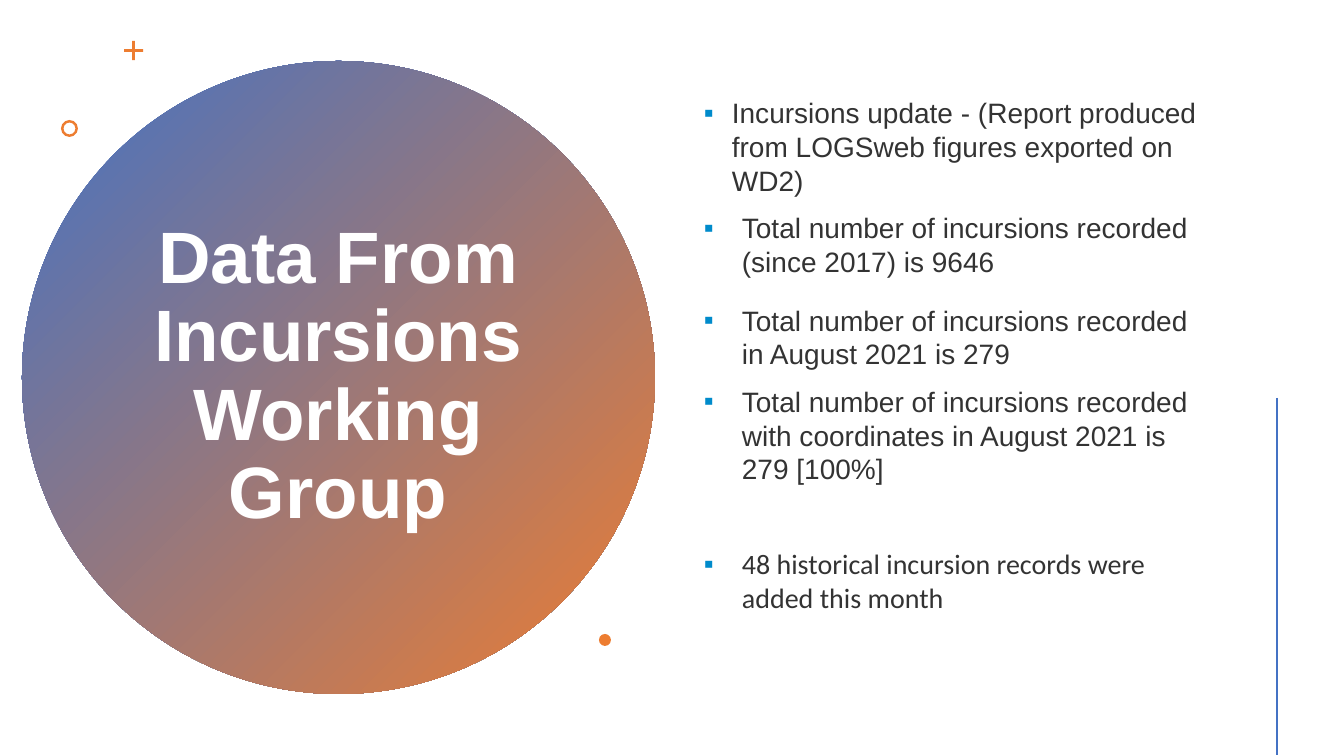
from lxml import etree
from pptx import Presentation
from pptx.dml.color import RGBColor
from pptx.enum.shapes import MSO_CONNECTOR, MSO_SHAPE
from pptx.enum.text import MSO_ANCHOR, PP_ALIGN
from pptx.oxml.ns import qn
from pptx.util import Pt

PX = 914400 / 100.8
BLUE = RGBColor(0x44, 0x72, 0xC4)
ORANGE = RGBColor(0xED, 0x7D, 0x31)
WHITE = RGBColor(0xFF, 0xFF, 0xFF)
DARK = RGBColor(0x33, 0x33, 0x33)
BULLET = RGBColor(0x00, 0x8B, 0xCB)

OVAL, DONUT, CROSS = MSO_SHAPE.OVAL, MSO_SHAPE.DONUT, MSO_SHAPE.CROSS
STRAIGHT = MSO_CONNECTOR.STRAIGHT
MIDDLE = MSO_ANCHOR.MIDDLE
CENTER = PP_ALIGN.CENTER

TITLE = "Data From Incursions Working Group"
TITLE_FONT = {"name": "Arial", "size": Pt(52), "bold": True}
BODY_FONT = {"name": "Arial", "size": Pt(20)}
# text, hanging indent in px, space before and after in points, font name
ITEMS = [
    ("Incursions update - (Report produced from LOGSweb figures exported on WD2)", 28, 0, 0, "Arial"),
    ("Total number of incursions recorded (since 2017) is 9646", 38, 10, 8, "Arial"),
    ("Total number of incursions recorded in August 2021 is 279", 38, 10, 0, "Arial"),
    ("Total number of incursions recorded with coordinates in August 2021 is 279 [100%]", 38, 10, 0, "Arial"),
    ("48 historical incursion records were added this month", 38, 44, 0, "Calibri"),
]


def px(*lengths):
    return [round(length * PX) for length in lengths]


def add_shape(slide, kind, box, color=ORANGE, adjustment=None):
    shape = slide.shapes.add_shape(kind, *px(*box))
    shape.shadow.inherit = False
    shape.line.fill.background()
    shape.fill.solid()
    shape.fill.fore_color.rgb = color
    if adjustment is not None:
        shape.adjustments[0] = adjustment
    return shape


def add_gradient_circle(slide, box):
    fill = add_shape(slide, OVAL, box).fill
    fill.gradient()
    fill.gradient_angle = 315
    for stop, position, color in zip(fill.gradient_stops, (0, 1), (BLUE, ORANGE)):
        stop.position = position
        stop.color.rgb = color


def add_text_frame(slide, box):
    frame = slide.shapes.add_textbox(*px(*box)).text_frame
    frame.word_wrap = True
    frame.vertical_anchor = MIDDLE
    return frame


def write_text(paragraph, text, font_values, color):
    run = paragraph.add_run()
    run.text = text
    for name, value in font_values.items():
        setattr(run.font, name, value)
    run.font.color.rgb = color


def add_bullet(paragraph, indent):
    """Give the paragraph a square bullet with a hanging indent."""
    properties = paragraph._p.get_or_add_pPr()
    (offset,) = px(indent)
    properties.set("marL", str(offset))
    properties.set("indent", str(-offset))
    color = etree.SubElement(properties, qn("a:buClr"))
    etree.SubElement(color, qn("a:srgbClr"), val=str(BULLET))
    etree.SubElement(properties, qn("a:buFont"), typeface="Arial")
    etree.SubElement(properties, qn("a:buChar"), char="▪")


def add_title(slide, box):
    paragraph = add_text_frame(slide, box).paragraphs[0]
    paragraph.alignment = CENTER
    paragraph.line_spacing = 0.9
    write_text(paragraph, TITLE, TITLE_FONT, WHITE)


def add_bullet_list(slide, box):
    frame = add_text_frame(slide, box)
    for index, (text, indent, before, after, font_name) in enumerate(ITEMS):
        paragraph = frame.add_paragraph() if index else frame.paragraphs[0]
        add_bullet(paragraph, indent)
        paragraph.space_before = Pt(before)
        paragraph.space_after = Pt(after)
        write_text(paragraph, text, BODY_FONT | {"name": font_name}, DARK)


def add_line(slide, ends):
    connector = slide.shapes.add_connector(STRAIGHT, *px(*ends))
    connector.line.color.rgb = BLUE
    connector.line.width = Pt(2)
    etree.SubElement(connector._element.spPr, qn("a:effectLst"))


def main():
    presentation = Presentation()
    presentation.slide_width, presentation.slide_height = px(1344, 756)
    slide = presentation.slides.add_slide(presentation.slide_layouts[6])
    add_gradient_circle(slide, (22, 61, 633, 633))
    add_title(slide, (137, 142, 402, 471))
    add_shape(slide, CROSS, (124, 41, 19, 19), adjustment=0.43)
    add_shape(slide, DONUT, (61, 120, 17, 17), adjustment=0.15)
    add_bullet_list(slide, (694, 57, 526, 596))
    add_shape(slide, OVAL, (599, 634, 12, 12))
    add_line(slide, (1277, 398, 1277, 755))
    presentation.save("out.pptx")


if __name__ == "__main__":
    main()
